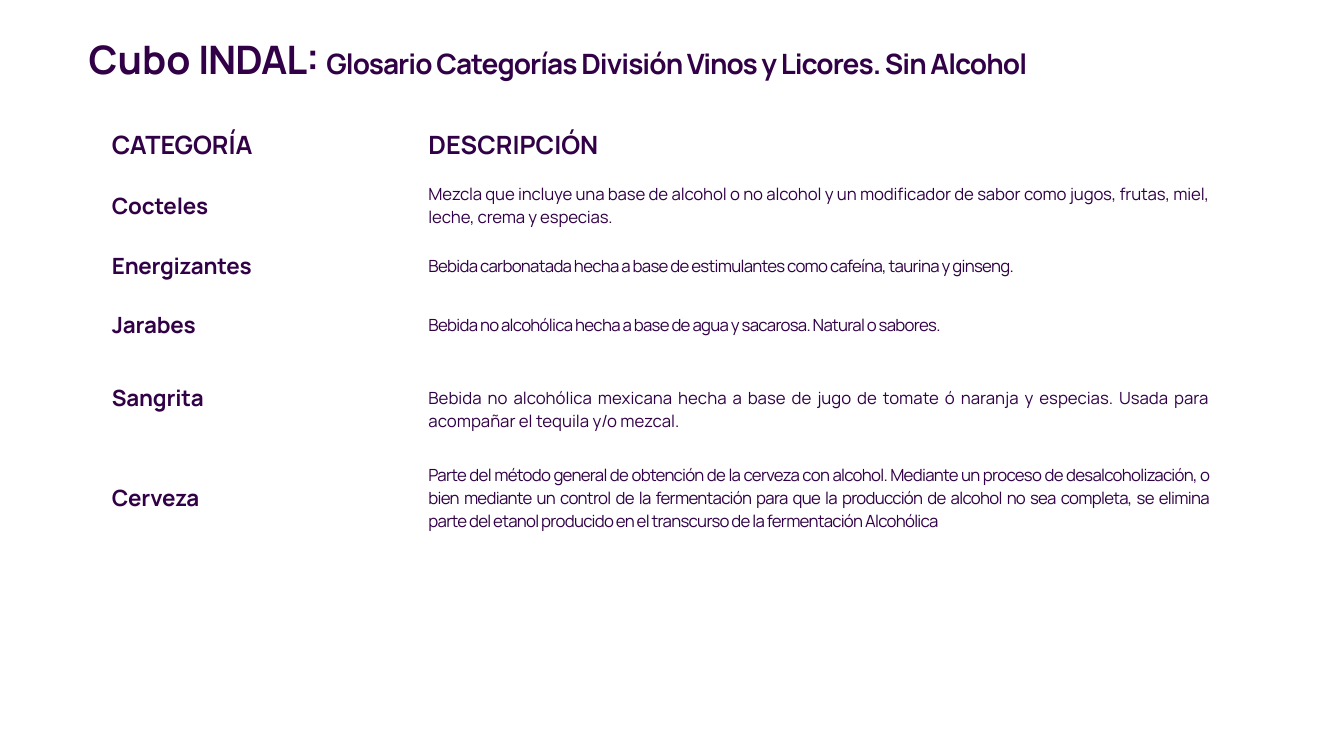
import pptx
import pptx.util
import pptx.dml.color
import pptx.enum.text
from pptx.util import Inches

TITLE = [("Cubo ", "title", 0), ("INDAL: ", "title", -0.7),
         ("Glosario Categorías División Vinos y Licores. Sin Alcohol", "subtitle", -0.7)]
HEADERS = ("CATEGORÍA", "DESCRIPCIÓN")
# category, description, letter spacing of the description, row height, top margin
ROWS = [
    ("Cocteles", "Mezcla que incluye una base de alcohol o no alcohol y un modificador de "
     "sabor como jugos, frutas, miel, leche, crema y especias.", -0.1, 0.62, 0.05),
    ("Energizantes", "Bebida carbonatada hecha a base de estimulantes como cafeína, taurina "
     "y ginseng.", -0.5, 0.58, 0.05),
    ("Jarabes", "Bebida no alcohólica hecha a base de agua y sacarosa. Natural o sabores.",
     -0.5, 0.58, 0.05),
    ("Sangrita", "Bebida no alcohólica mexicana hecha a base de jugo de tomate ó naranja y "
     "especias. Usada para acompañar el tequila y/o mezcal.", 0, 0.87, 0.28),
    ("Cerveza", "Parte del método general de obtención de la cerveza con alcohol. Mediante "
     "un proceso de desalcoholización, o bien mediante un control de la fermentación para "
     "que la producción de alcohol no sea completa, se elimina parte del etanol producido "
     "en el transcurso de la fermentación Alcohólica", -0.5, 1.12, 0.05),
]
HEADER_HEIGHT = 0.58
COLUMN_WIDTHS = (3.14, 7.95)
THEME = {
    "font": "Manrope",
    "color": pptx.dml.color.RGBColor.from_string("310046"),
    "sizes": {"title": 28, "subtitle": 20, "header": 18, "category": 16, "description": 12},
}


def style_run(r, role, spacing=0):
    r.font.name = THEME["font"]
    r.font.size = pptx.util.Pt(THEME["sizes"][role])
    r.font.bold = role != "description"
    r.font.color.rgb = THEME["color"]
    if spacing:
        r.font._element.set("spc", str(round(spacing * 100)))


def fill_cell(cell, text, role, spacing=0, top=0.05):
    cell.fill.background()
    cell.vertical_anchor = pptx.enum.text.MSO_ANCHOR.MIDDLE
    cell.margin_top = Inches(top)
    cell.text_frame.text = text
    p = cell.text_frame.paragraphs[0]
    if role == "description":
        p.alignment = pptx.enum.text.PP_ALIGN.JUSTIFY
    style_run(p.runs[0], role, spacing)


def add_title(s):
    box = s.shapes.add_textbox(Inches(0.87), Inches(0.33), Inches(11.09), Inches(0.49))
    tf = box.text_frame
    tf.word_wrap = True
    tf.margin_left = Inches(0.01)
    tf.margin_right = tf.margin_bottom = 0
    tf.margin_top = Inches(0.02)
    for text, role, spacing in TITLE:
        r = tf.paragraphs[0].add_run()
        r.text = text
        style_run(r, role, spacing)


def add_glossary(s):
    heights = [HEADER_HEIGHT] + [row[3] for row in ROWS]
    frame = s.shapes.add_table(len(heights), len(COLUMN_WIDTHS), Inches(1.01), Inches(1.15),
                               Inches(sum(COLUMN_WIDTHS)), Inches(sum(heights)))
    table = frame.table
    table.first_row = table.horz_banding = False
    for column, width in zip(table.columns, COLUMN_WIDTHS):
        column.width = Inches(width)
    for row, height in zip(table.rows, heights):
        row.height = Inches(height)
    for i, header in enumerate(HEADERS):
        fill_cell(table.cell(0, i), header, "header")
    for i, (category, description, spacing, _, top) in enumerate(ROWS, start=1):
        fill_cell(table.cell(i, 0), category, "category", -0.1)
        fill_cell(table.cell(i, 1), description, "description", spacing, top)


def main():
    prs = pptx.Presentation()
    prs.slide_width, prs.slide_height = Inches(13.33), Inches(7.5)
    s = prs.slides.add_slide(prs.slide_layouts[6])
    add_title(s)
    add_glossary(s)
    prs.save("out.pptx")


if __name__ == "__main__":
    main()
